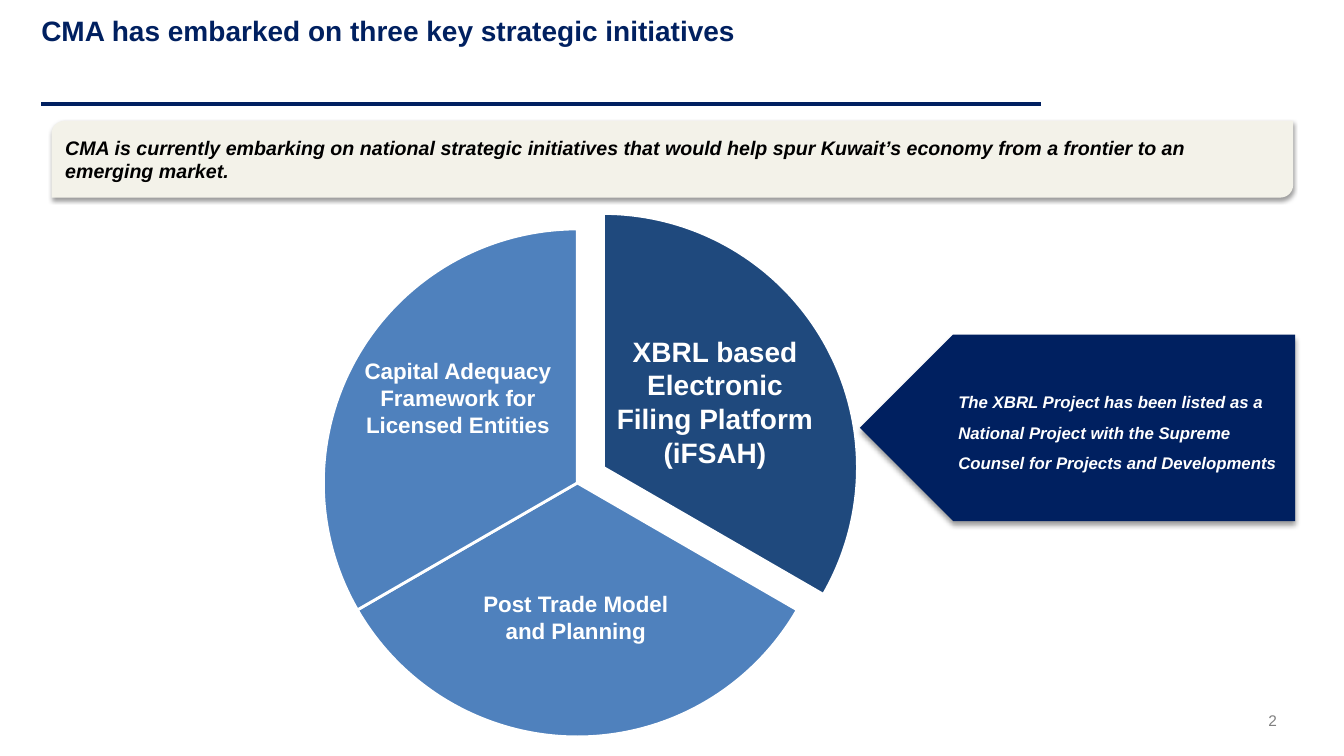
from dataclasses import dataclass

import pptx
import pptx.dml.color
import pptx.enum.shapes
import pptx.enum.text
import pptx.oxml
import pptx.oxml.ns
import pptx.util

Cm = pptx.util.Cm
Pt = pptx.util.Pt
Kind = pptx.enum.shapes.MSO_SHAPE
Align = pptx.enum.text.PP_ALIGN
Anchor = pptx.enum.text.MSO_ANCHOR
Fit = pptx.enum.text.MSO_AUTO_SIZE


@dataclass(frozen=True)
class Theme:
    font: str = "Arial"
    navy: str = "002060"
    dark: str = "1F497D"
    blue: str = "4F81BD"
    cream: str = "F3F2E9"
    white: str = "FFFFFF"
    black: str = "000000"
    gray: str = "808080"
    head: int = 20
    label: int = 16
    lead: int = 14
    note: int = 12
    page: int = 11


def color(code):
    return pptx.dml.color.RGBColor.from_string(code)


class Board:
    """Holds the theme and the slide, and draws each kind of element."""

    def __init__(self, slide, theme):
        self.slide, self.theme = slide, theme
        self.shapes = slide.shapes

    def fill_text(self, item, lines, size, tint, align=Align.LEFT, space=None,
                  frame=None, **looks):
        """Fill a text frame, one paragraph for each line."""
        body = item.text_frame
        form = {"word_wrap": True, "auto_size": Fit.NONE,
                "vertical_anchor": Anchor.MIDDLE, **(frame or {})}
        for key, value in form.items():
            setattr(body, key, value)
        body.text = "\n".join(lines)
        looks = {"name": self.theme.font, "size": Pt(size), **looks}
        for para in body.paragraphs:
            for key, value in {"alignment": align, "line_spacing": space}.items():
                setattr(para, key, value)
            for key, value in looks.items():
                setattr(para.font, key, value)
            para.font.color.rgb = color(tint)
        return item

    def title(self, text, box):
        item = self.shapes.title
        for key, value in zip(("left", "top", "width", "height"), box):
            setattr(item, key, Cm(value))
        frame = {"vertical_anchor": Anchor.TOP, "margin_left": 0,
                 "margin_right": 0, "margin_top": Cm(0.1), "margin_bottom": 0}
        self.fill_text(item, [text], self.theme.head, self.theme.navy,
                       space=0.85, frame=frame, bold=True)

    def text(self, lines, box, size, tint, **form):
        item = self.shapes.add_textbox(*map(Cm, box))
        return self.fill_text(item, lines, size, tint, **form)

    def shape(self, kind, box, fill, edge=None):
        item = self.shapes.add_shape(kind, *map(Cm, box))
        item.shadow.inherit = False
        item.fill.solid()
        item.fill.fore_color.rgb = color(fill)
        if edge:
            item.line.color.rgb = color(edge)
            item.line.width = Pt(2)
        else:
            item.line.fill.background()
        return item

    def shade(self, item, alpha, blur, dist):
        """Cast a soft shadow straight down."""
        space = pptx.oxml.ns.nsdecls("a")
        xml = (f'<a:outerShdw {space} blurRad="{Pt(blur)}" dist="{Pt(dist)}" '
               f'dir="5400000" rotWithShape="0"><a:srgbClr val="{self.theme.black}">'
               f'<a:alpha val="{alpha * 1000}"/></a:srgbClr></a:outerShdw>')
        glow = item._element.spPr.find(pptx.oxml.ns.qn("a:effectLst"))
        glow.append(pptx.oxml.parse_xml(xml))

    def rule(self, ends, tint, width):
        straight = pptx.enum.shapes.MSO_CONNECTOR.STRAIGHT
        item = self.shapes.add_connector(straight, *map(Cm, ends))
        item.line.color.rgb = color(tint)
        item.line.width = Pt(width)
        space = pptx.oxml.ns.nsdecls("a")
        item._element.spPr.append(pptx.oxml.parse_xml(f"<a:effectLst {space}/>"))

    def group(self, parts):
        self.shapes.add_group_shape(parts)


def main():
    deck = pptx.Presentation()
    deck.slide_width, deck.slide_height = Cm(33.87), Cm(19.05)
    theme = Theme()
    board = Board(deck.slides.add_slide(deck.slide_layouts[5]), theme)

    # Page number, rule and title
    flush = dict.fromkeys(
        ("margin_left", "margin_right", "margin_top", "margin_bottom"), 0)
    flush["vertical_anchor"] = Anchor.TOP
    board.text(["2"], (29.51, 17.93, 2.67, 0.56), theme.page, theme.gray,
               align=Align.RIGHT, frame=flush)
    board.rule((1.04, 2.62, 26.24, 2.62), theme.navy, 3)
    board.title("CMA has embarked on three key strategic initiatives",
                (1.04, 0.36, 25.2, 2.24))

    # Pie of three equal wedges, clockwise from the top, the first pulled out
    size, turn, start = 12.8, 72, 162
    wedges = [
        ((8.81, 5.38), theme.dark, (15.19, 8.86), theme.head,
         ["XBRL based Electronic Filing Platform", "(iFSAH)"]),
        ((8.15, 5.77), theme.blue, (11.68, 14.3), theme.label,
         ["Post Trade Model and Planning"]),
        ((8.15, 5.77), theme.blue, (8.71, 8.76), theme.label,
         ["Capital Adequacy Framework for Licensed Entities"]),
    ]
    parts = []
    for step, (spot, fill, *_) in enumerate(wedges):
        wedge = board.shape(Kind.PIE, (*spot, size, size), fill, theme.white)
        for end in (0, 1):
            wedge.adjustments[end] = (start + (step + end) * turn) % 216
        parts.append(wedge)
    for _, _, spot, points, lines in wedges:
        parts.append(board.text(lines, (*spot, 5.66, 2.51), points, theme.white,
                                align=Align.CENTER, bold=True))
    board.group(parts)

    # Lead statement
    banner = board.shape(Kind.ROUND_2_DIAG_RECTANGLE, (1.3, 3.05, 31.29, 1.93),
                         theme.cream)
    board.shade(banner, 38, 3.1, 1.6)
    board.fill_text(banner, ["CMA is currently embarking on national strategic "
                             "initiatives that would help spur Kuwait’s economy "
                             "from a frontier to an emerging market."],
                    theme.lead, theme.black, bold=True, italic=True)

    # Arrow with the note on the first wedge
    arrow = board.shape(Kind.PENTAGON, (21.67, 8.43, 10.97, 4.7), theme.navy)
    arrow.rotation = 180
    board.shade(arrow, 40, 4, 3)
    note = board.text(["The XBRL Project has been listed as a National Project "
                       "with the Supreme Counsel for Projects and Developments"],
                      (23.9, 9.32, 8.74, 2.9), theme.note, theme.white,
                      space=1.5, bold=True, italic=True)
    board.group([arrow, note])

    deck.save("out.pptx")


if __name__ == "__main__":
    main()
